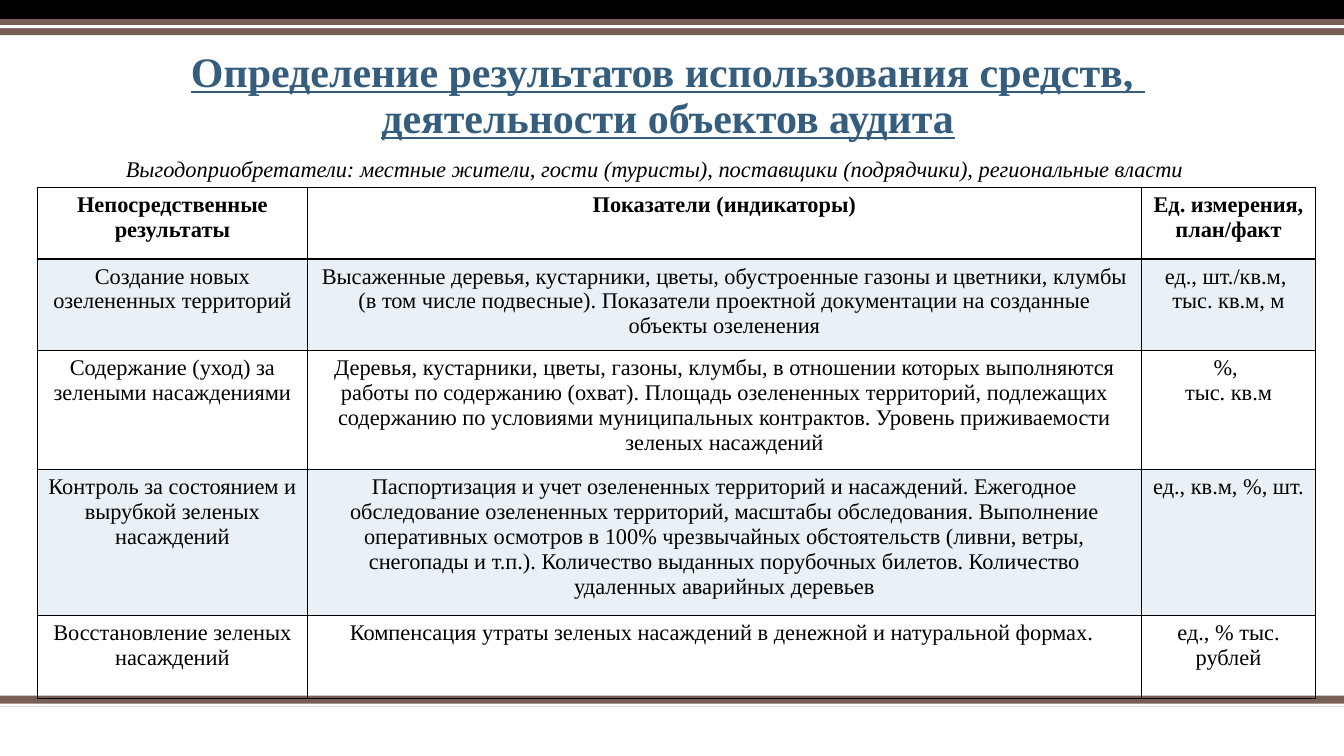
from dataclasses import dataclass

from lxml import etree
from pptx import Presentation
from pptx.dml.color import RGBColor
from pptx.enum.shapes import MSO_SHAPE
from pptx.enum.text import MSO_ANCHOR, PP_ALIGN
from pptx.oxml.ns import qn
from pptx.slide import Slide
from pptx.table import _Cell
from pptx.text.text import Font, TextFrame
from pptx.util import Inches, Pt

RECTANGLE = MSO_SHAPE.RECTANGLE
CENTER, JUSTIFY = PP_ALIGN.CENTER, PP_ALIGN.JUSTIFY
TOP, BOTTOM = MSO_ANCHOR.TOP, MSO_ANCHOR.BOTTOM

BLACK = RGBColor(0x00, 0x00, 0x00)
WHITE = RGBColor(0xFF, 0xFF, 0xFF)
BROWN = RGBColor(0x77, 0x5F, 0x55)
TITLE_BLUE = RGBColor(0x35, 0x5D, 0x7E)
ROW_BLUE = RGBColor(0x94, 0xB6, 0xD2)
ROW_ALPHA = 20
FONT = "Times New Roman"
SLIDE_WIDTH, SLIDE_HEIGHT = 13.33, 7.5


@dataclass(frozen=True)
class Band:
    top: float
    height: float
    color: RGBColor


@dataclass(frozen=True)
class ResultRow:
    height: float
    result: str
    indicators: str
    units: str


BANDS = [
    Band(6.9, 0.11, BROWN),
    Band(6.98, 0.03, WHITE),
    Band(0, 0.19, BLACK),
    Band(0.19, 0.16, BROWN),
    Band(0.25, 0.03, WHITE),
]

TITLE_LINES = ["Определение результатов использования средств, ",
               "деятельности объектов аудита"]
BENEFICIARIES = ("Выгодоприобретатели: местные жители, гости (туристы), "
                 "поставщики (подрядчики), региональные власти")

COLUMN_WIDTHS = [2.68, 8.27, 1.73]
ROWS = [
    ResultRow(0.71, "Непосредственные результаты", "Показатели (индикаторы)",
              "Ед. измерения, план/факт"),
    ResultRow(0.91, "Создание новых озелененных территорий",
              "Высаженные деревья, кустарники, цветы, обустроенные газоны и "
              "цветники, клумбы (в том числе подвесные). Показатели проектной "
              "документации на созданные объекты озеленения",
              "ед., шт./кв.м, \nтыс. кв.м, м"),
    ResultRow(1.18, "Содержание (уход) за зелеными насаждениями",
              "Деревья, кустарники, цветы, газоны, клумбы, в отношении которых "
              "выполняются работы по содержанию (охват). Площадь озелененных "
              "территорий, подлежащих содержанию по условиями муниципальных "
              "контрактов. Уровень приживаемости зеленых насаждений",
              "%, \nтыс. кв.м"),
    ResultRow(1.45, "Контроль за состоянием и вырубкой зеленых насаждений",
              "Паспортизация и учет озелененных территорий и насаждений. "
              "Ежегодное обследование озелененных территорий, масштабы "
              "обследования. Выполнение оперативных осмотров в 100% чрезвычайных "
              "обстоятельств (ливни, ветры, снегопады и т.п.). Количество "
              "выданных порубочных билетов. Количество удаленных аварийных "
              "деревьев",
              "ед., кв.м, %, шт."),
    ResultRow(0.82, "Восстановление зеленых насаждений",
              "Компенсация утраты зеленых насаждений в денежной и натуральной "
              "формах. ",
              "ед., % тыс. рублей"),
]


def style_font(font: Font, size: float, color: RGBColor = BLACK,
               bold: bool = False) -> None:
    font.name = FONT
    font.size = Pt(size)
    font.color.rgb = color
    font.bold = bold


def add_band(slide: Slide, band: Band) -> None:
    """Draw a full-width stripe."""
    stripe = slide.shapes.add_shape(RECTANGLE, 0, Inches(band.top),
                                    Inches(SLIDE_WIDTH), Inches(band.height))
    stripe.shadow.inherit = False
    stripe.fill.solid()
    stripe.fill.fore_color.rgb = band.color
    stripe.line.fill.background()


def add_text_frame(slide: Slide, left: float, top: float, width: float,
                   height: float, anchor: MSO_ANCHOR) -> TextFrame:
    box = slide.shapes.add_textbox(Inches(left), Inches(top),
                                   Inches(width), Inches(height))
    frame = box.text_frame
    frame.word_wrap = True
    frame.vertical_anchor = anchor
    return frame


def add_title(slide: Slide) -> None:
    frame = add_text_frame(slide, 0.68, 0.44, 11.89, 1.02, BOTTOM)
    paragraph = frame.paragraphs[0]
    paragraph.alignment = CENTER
    paragraph.line_spacing = 0.9
    for index, line in enumerate(TITLE_LINES):
        if index:
            paragraph.add_line_break()
        run = paragraph.add_run()
        run.text = line
        style_font(run.font, 30, TITLE_BLUE, bold=True)
        run.font.underline = True


def add_beneficiaries(slide: Slide) -> None:
    frame = add_text_frame(slide, 1.15, 1.47, 11.01, 4.57, TOP)
    paragraph = frame.paragraphs[0]
    paragraph.alignment = JUSTIFY
    paragraph.line_spacing = 1.07
    paragraph.space_before = paragraph.space_after = Pt(6)
    run = paragraph.add_run()
    run.text = BENEFICIARIES
    style_font(run.font, 16)
    run.font.italic = True


def add_borders(cell: _Cell) -> None:
    properties = cell._tc.get_or_add_tcPr()
    for position, side in enumerate(("a:lnL", "a:lnR", "a:lnT", "a:lnB")):
        line = etree.Element(qn(side), w=str(Pt(1)))
        fill = etree.SubElement(line, qn("a:solidFill"))
        etree.SubElement(fill, qn("a:srgbClr"), val=str(BLACK))
        properties.insert(position, line)


def fill_cell(cell: _Cell, shaded: bool) -> None:
    if not shaded:
        cell.fill.background()
        return
    cell.fill.solid()
    cell.fill.fore_color.rgb = ROW_BLUE
    color = cell._tc.tcPr.find(f"{qn('a:solidFill')}/{qn('a:srgbClr')}")
    etree.SubElement(color, qn("a:alpha"), val=str(ROW_ALPHA * 1000))


def write_cell(cell: _Cell, text: str, bold: bool) -> None:
    frame = cell.text_frame
    for index, line in enumerate(text.split("\n")):
        paragraph = frame.add_paragraph() if index else frame.paragraphs[0]
        paragraph.alignment = CENTER
        run = paragraph.add_run()
        run.text = line
        style_font(run.font, 16, bold=bold)


def add_results_table(slide: Slide) -> None:
    table = slide.shapes.add_table(
        len(ROWS), len(COLUMN_WIDTHS), Inches(0.37), Inches(1.86),
        Inches(sum(COLUMN_WIDTHS)), Inches(sum(row.height for row in ROWS)),
    ).table
    table.first_row = table.horz_banding = False
    for column, width in zip(table.columns, COLUMN_WIDTHS):
        column.width = Inches(width)
    for index, row in enumerate(ROWS):
        table.rows[index].height = Inches(row.height)
        texts = (row.result, row.indicators, row.units)
        for cell, text in zip(table.rows[index].cells, texts):
            fill_cell(cell, shaded=index % 2 == 1)
            add_borders(cell)
            write_cell(cell, text, bold=index == 0)


def main() -> None:
    presentation = Presentation()
    presentation.slide_width = Inches(SLIDE_WIDTH)
    presentation.slide_height = Inches(SLIDE_HEIGHT)
    slide = presentation.slides.add_slide(presentation.slide_layouts[6])
    for band in BANDS:
        add_band(slide, band)
    add_title(slide)
    add_beneficiaries(slide)
    add_results_table(slide)
    presentation.save("out.pptx")


if __name__ == "__main__":
    main()
